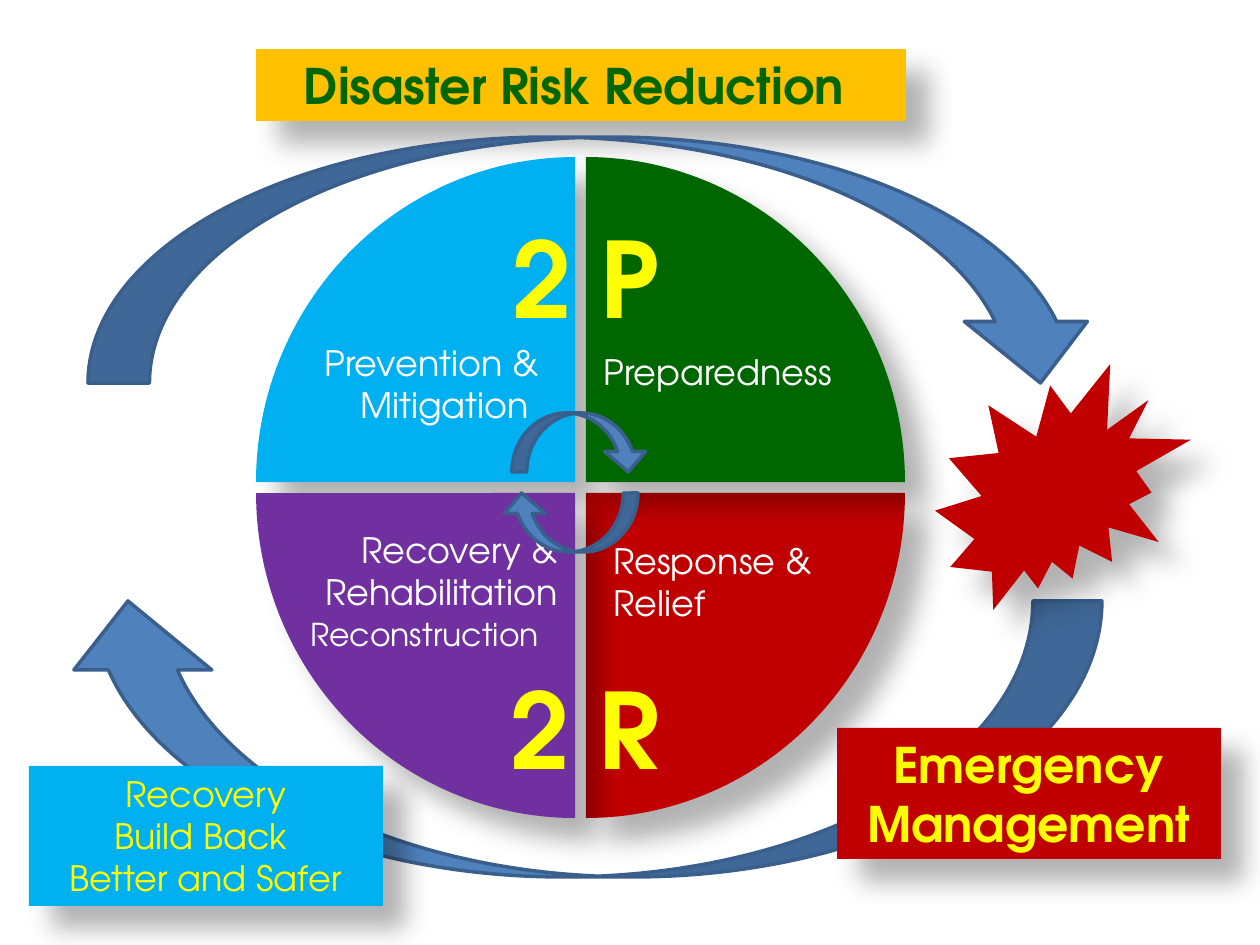
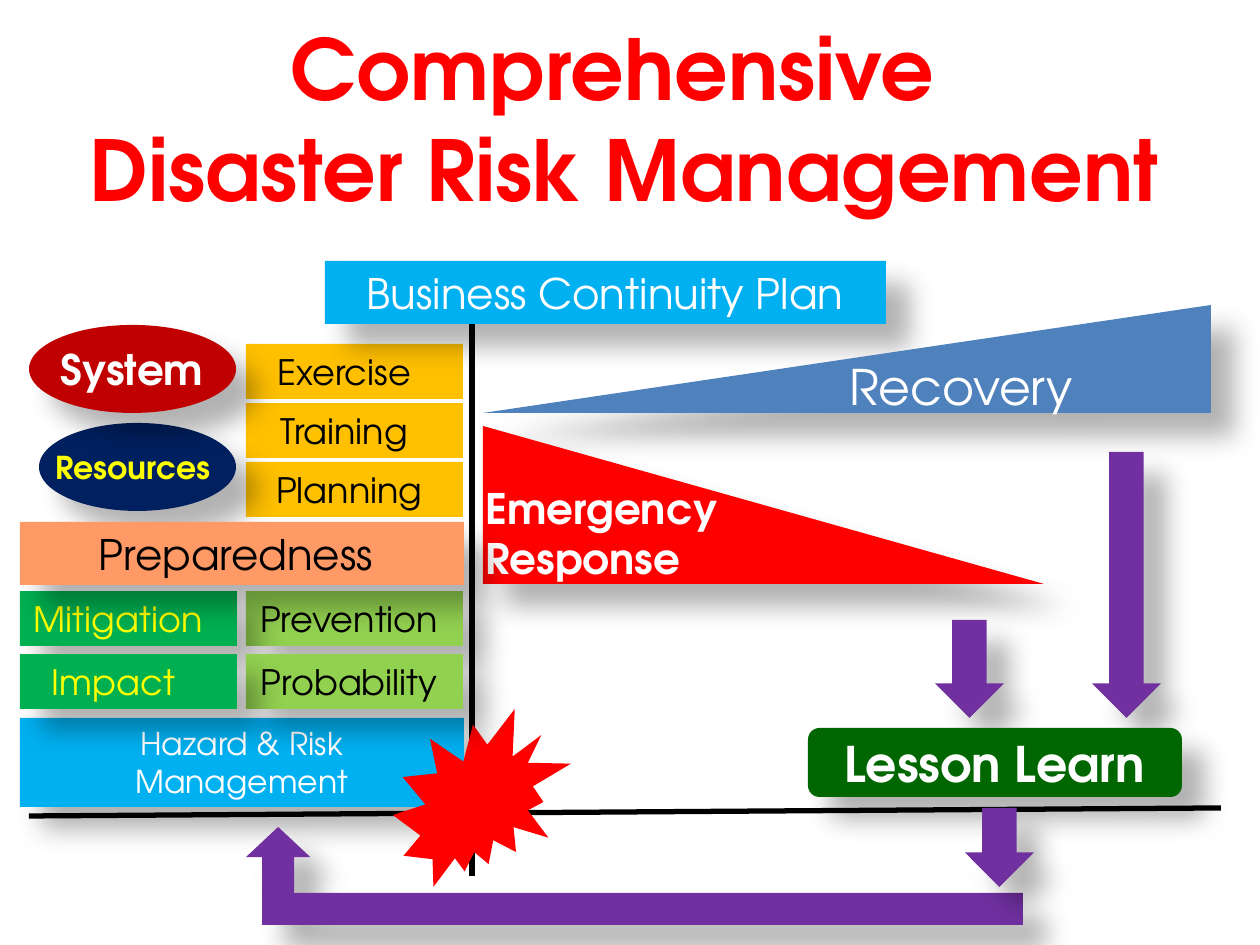
import pptx
import pptx.dml.color
import pptx.enum.shapes
import pptx.enum.text
import pptx.oxml
import pptx.oxml.ns
import pptx.util

PX = 7257  # EMU in one px, 126 px to the inch
FONT = "TeX Gyre Adventor"
WHITE, BLACK, YELLOW, RED = "FFFFFF", "000000", "FFFF00", "FF0000"
SKY, DARK_GREEN, PURPLE, CRIMSON = "00B0F0", "006600", "7030A0", "C00000"
GREEN, LIME, AMBER, STEEL, STEEL_EDGE = "00B050", "92D050", "FFC000", "4F81BD", "3A5F8C"
NAVY, SALMON = "002060", "FF9966"

KIND = pptx.enum.shapes.MSO_SHAPE
ALIGN = pptx.enum.text.PP_ALIGN
ANCHOR = pptx.enum.text.MSO_ANCHOR
rgb = pptx.dml.color.RGBColor.from_string

SHADOW = (
    f'<a:outerShdw {pptx.oxml.ns.nsdecls("a")} blurRad="190500" dist="228600" dir="2700000" '
    'algn="tl" rotWithShape="0"><a:srgbClr val="000000"><a:alpha val="30000"/></a:srgbClr></a:outerShdw>'
)


def place(slide, kind, box, fill=None, line=None, shadow=True, flip=False, rotation=0, adjustments=()):
    """Add a preset shape or "textbox", or move the "title", and paint it."""
    left, top, width, height = [value * PX for value in box]
    if kind == "title":
        shape = slide.shapes.title
        shape.left, shape.top, shape.width, shape.height = left, top, width, height
    elif kind == "textbox":
        shape = slide.shapes.add_textbox(left, top, width, height)
    else:
        shape = slide.shapes.add_shape(kind, left, top, width, height)
    for index, value in enumerate(adjustments):
        shape.adjustments[index] = value
    shape.rotation = rotation
    if flip:
        shape.element.spPr.xfrm.set("flipH", "1")
    if fill:
        shape.fill.solid()
        shape.fill.fore_color.rgb = rgb(fill)
    if line:
        shape.line.color.rgb = rgb(line)
        shape.line.width = pptx.util.Pt(2)
    else:
        shape.line.fill.background()
    shape.shadow.inherit = False
    if fill and shadow:
        effects = shape.element.spPr.find(pptx.oxml.ns.qn("a:effectLst"))
        effects.append(pptx.oxml.parse_xml(SHADOW))
    return shape


def write(shape, text, size=20, color=WHITE, bold=False, align=ALIGN.CENTER,
          anchor=ANCHOR.TOP, wrap=True, right=13):
    frame = shape.text_frame
    frame.text = text
    frame.auto_size = pptx.enum.text.MSO_AUTO_SIZE.NONE
    frame.word_wrap = wrap
    frame.vertical_anchor = anchor
    frame.margin_right = right * PX
    for paragraph in frame.paragraphs:
        paragraph.alignment = align
        for run in paragraph.runs:
            run.font.name = FONT
            run.font.size = pptx.util.Pt(size)
            run.font.bold = bold
            run.font.color.rgb = rgb(color)


presentation = pptx.Presentation()
presentation.slide_width = pptx.util.Inches(10)
presentation.slide_height = pptx.util.Inches(7.5)
title_only = presentation.slide_layouts[5]

# Slide 1: the disaster management cycle
slide = presentation.slides.add_slide(title_only)
title = place(slide, "title", (256, 49, 650, 72), AMBER)
write(title, "Disaster Risk Reduction ", size=28, color=DARK_GREEN, bold=True)

place(slide, KIND.CURVED_UP_ARROW, (59, 601, 1043, 276), STEEL, STEEL_EDGE, shadow=False, flip=True)

# Each quarter is the lower right one, turned about its own centre
for fill, center_x, center_y, rotation in (
    (CRIMSON, 586, 493, 0),
    (SKY, 575, 482, 180),
    (DARK_GREEN, 586, 482, 270),
    (PURPLE, 575, 493, 90),
):
    width, height = (638, 650) if rotation % 180 == 0 else (650, 638)
    box = (center_x - width // 2, center_y - height // 2, width, height)
    place(slide, KIND.PIE, box, fill, rotation=rotation, adjustments=(0, 54))

for text, box, size, align in (
    ("Prevention &\nMitigation ", (276, 335, 276, 97), 20, ALIGN.RIGHT),
    ("Preparedness", (591, 344, 276, 55), 20, ALIGN.LEFT),
    ("Response &\nRelief", (601, 533, 276, 97), 20, ALIGN.LEFT),
    ("Recovery &\nRehabilitation", (295, 522, 276, 97), 20, ALIGN.RIGHT),
    ("Reconstruction", (276, 609, 276, 50), 18, ALIGN.RIGHT),
):
    write(place(slide, "textbox", box), text, size=size, align=align)

for left, top, rotation in ((512, 413, 0), (501, 493, 180)):
    place(slide, KIND.CURVED_DOWN_ARROW, (left, top, 137, 59), STEEL, STEEL_EDGE, shadow=False,
          rotation=rotation, adjustments=(0.25, 0.695, 0.347))

place(slide, KIND.EXPLOSION2, (935, 364, 256, 246), CRIMSON)
place(slide, KIND.CURVED_DOWN_ARROW, (88, 137, 1014, 246), STEEL, STEEL_EDGE, shadow=False)

emergency = place(slide, KIND.RECTANGLE, (837, 728, 384, 131), CRIMSON)
write(emergency, "Emergency Management", size=28, color=YELLOW, bold=True)
recovery = place(slide, KIND.RECTANGLE, (29, 766, 354, 140), SKY)
write(recovery, "Recovery\nBuild Back \nBetter and Safer", color=YELLOW)

for text, box in (("2 P", (493, 207, 186, 140)), ("2 R", (472, 658, 227, 140))):
    write(place(slide, "textbox", box), text, size=60, color=YELLOW, bold=True)

# Slide 2: the phases before and after an event
slide = presentation.slides.add_slide(title_only)
title = place(slide, "title", (29, 10, 1191, 217))
write(title, "Comprehensive \nDisaster Risk Management", size=48, color=RED, bold=True)

hazard = place(slide, KIND.RECTANGLE, (20, 718, 444, 89), SKY)
write(hazard, "Hazard & Risk\nManagement", size=18)

for ends in ((29, 816, 1221, 808), (472, 286, 472, 876)):
    axis = slide.shapes.add_connector(
        pptx.enum.shapes.MSO_CONNECTOR.STRAIGHT, *[value * PX for value in ends])
    axis.line.color.rgb = rgb(BLACK)
    axis.line.width = pptx.util.Pt(3)
    axis.element.spPr.append(pptx.oxml.parse_xml(f'<a:effectLst {pptx.oxml.ns.nsdecls("a")}/>'))

place(slide, KIND.EXPLOSION2, (393, 709, 178, 178), RED, shadow=False)

LEFT_COLUMN, RIGHT_COLUMN = 20, 246
for text, left, top, fill, color, right in (
    ("Prevention ", RIGHT_COLUMN, 591, LIME, BLACK, 13),
    ("Mitigation ", LEFT_COLUMN, 591, GREEN, YELLOW, 23),
    ("Probability ", RIGHT_COLUMN, 654, LIME, BLACK, 13),
    ("Impact ", LEFT_COLUMN, 654, GREEN, YELLOW, 33),
    ("Planning ", RIGHT_COLUMN, 462, AMBER, BLACK, 13),
    ("Training ", RIGHT_COLUMN, 403, AMBER, BLACK, 23),
    ("Exercise ", RIGHT_COLUMN, 344, AMBER, BLACK, 23),
):
    cell = place(slide, KIND.RECTANGLE, (left, top, 217, 55), fill, shadow=fill != AMBER)
    write(cell, text, color=color, right=right)

continuity = place(slide, KIND.RECTANGLE, (325, 261, 561, 63), SKY)
write(continuity, "Business Continuity Plan", size=24)

recovery = place(slide, KIND.RIGHT_TRIANGLE, (483, 305, 728, 108), STEEL, flip=True)
write(recovery, "Recovery ", size=28, anchor=ANCHOR.MIDDLE)
place(slide, KIND.RIGHT_TRIANGLE, (483, 426, 561, 158), RED)
response = place(slide, "textbox", (473, 476, 266, 115))
write(response, "Emergency Response", size=24, bold=True, align=ALIGN.LEFT)

for left, top, height in ((935, 620, 98), (1092, 452, 266)):
    place(slide, KIND.DOWN_ARROW, (left, top, 69, height), PURPLE)
lesson = place(slide, KIND.ROUNDED_RECTANGLE, (808, 728, 374, 69), DARK_GREEN)
write(lesson, "Lesson Learn", size=28, bold=True, anchor=ANCHOR.MIDDLE)
place(slide, KIND.BENT_UP_ARROW, (246, 827, 777, 98), PURPLE, flip=True,
      adjustments=(0.328, 0.328, 0.308))
place(slide, KIND.DOWN_ARROW, (965, 808, 69, 79), PURPLE)

for text, box, fill, color, size in (
    ("Resources ", (39, 423, 197, 88), NAVY, YELLOW, 18),
    ("System", (29, 325, 207, 88), CRIMSON, WHITE, 24),
):
    write(place(slide, KIND.OVAL, box, fill), text, size=size, color=color, bold=True,
          anchor=ANCHOR.MIDDLE, wrap=False)

preparedness = place(slide, KIND.RECTANGLE, (20, 522, 444, 63), SALMON)
write(preparedness, "Preparedness ", size=24, color=BLACK)

presentation.save("out.pptx")
